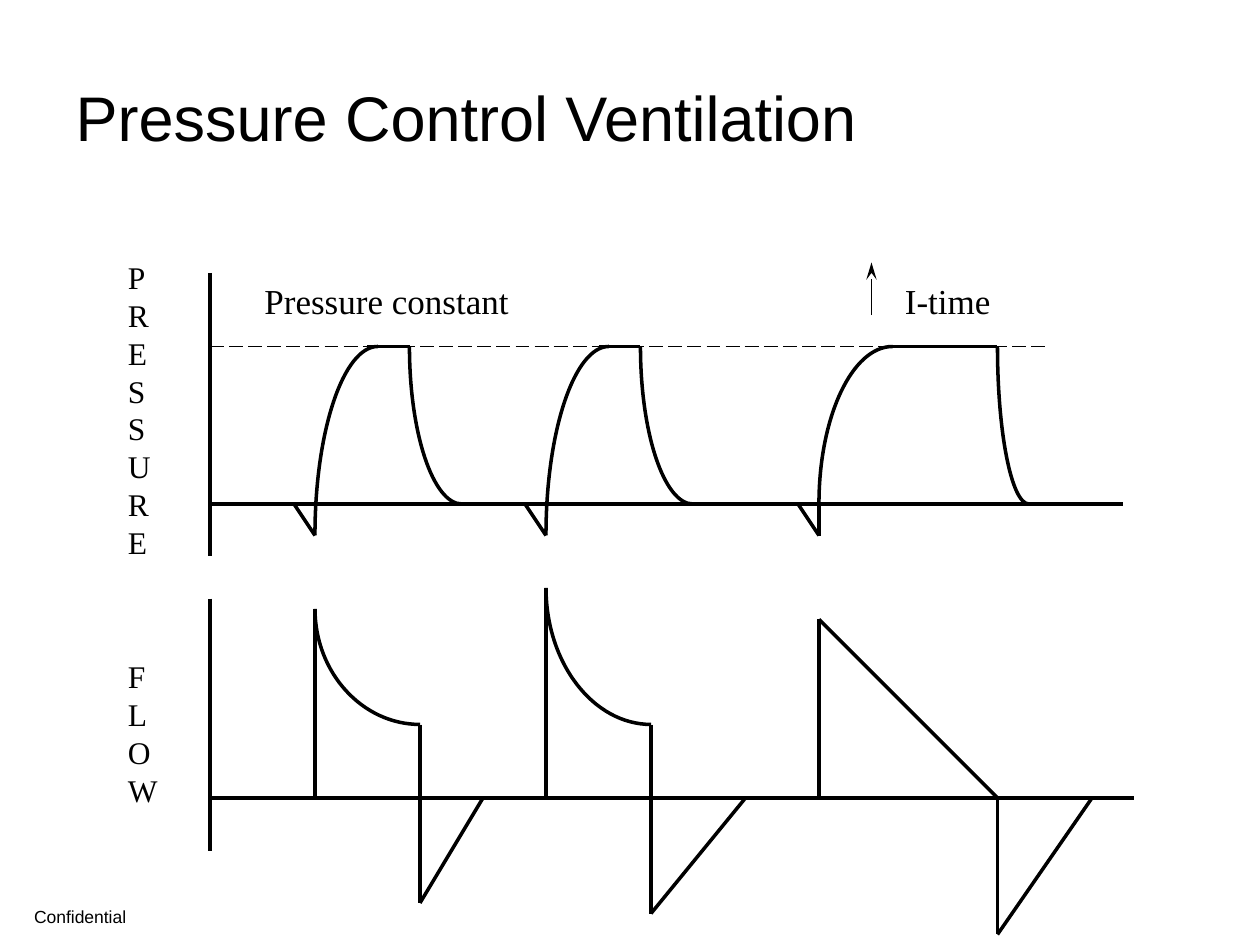
from dataclasses import dataclass

from lxml.etree import SubElement
from pptx import Presentation
from pptx.dml.color import RGBColor
from pptx.enum.dml import MSO_LINE as Dash
from pptx.enum.shapes import MSO_CONNECTOR as Connector
from pptx.enum.text import MSO_ANCHOR as Anchor, MSO_AUTO_SIZE as AutoSize, PP_ALIGN as Align
from pptx.oxml.ns import qn
from pptx.util import Pt


@dataclass(frozen=True)
class Theme:
    ink: RGBColor = RGBColor(0, 0, 0)
    paper: RGBColor = RGBColor(255, 255, 255)
    sans: str = "Arial"
    serif: str = "Times New Roman"
    title: int = 36
    label: int = 20
    axis: int = 18
    footer: int = 10
    trace: int = 2
    thin: int = 1


theme = Theme()


def write(frame, text, size, font=theme.sans, anchor=Anchor.TOP, inset=(7.2, 3.6),
          fit=AutoSize.SHAPE_TO_FIT_TEXT, leading=None):
    frame.word_wrap = True
    frame.auto_size = fit
    frame.vertical_anchor = anchor
    frame.margin_left = frame.margin_right = Pt(inset[0])
    frame.margin_top = frame.margin_bottom = Pt(inset[1])
    paragraph = frame.paragraphs[0]
    paragraph.alignment = Align.LEFT
    if leading:
        paragraph.line_spacing = Pt(size * leading)
    run = paragraph.add_run()
    run.text = text
    run.font.name = font
    run.font.size = Pt(size)
    run.font.color.rgb = theme.ink


def draw_line(x1, y1, x2, y2, weight=theme.trace, dash=None, arrow=None):
    segment = slide.shapes.add_connector(Connector.STRAIGHT, Pt(x1), Pt(y1), Pt(x2), Pt(y2))
    segment.line.color.rgb = theme.ink
    segment.line.width = Pt(weight)
    if dash:
        segment.line.dash_style = dash
    properties = segment._element.spPr
    if arrow:
        SubElement(properties.find(qn("a:ln")), qn("a:tailEnd"), type=arrow, w="med", len="lg")
    SubElement(properties, qn("a:effectLst"))


deck = Presentation()
deck.slide_width, deck.slide_height = Pt(720), Pt(540)
slide = deck.slides.add_slide(deck.slide_layouts[5])
slide.background.fill.solid()
slide.background.fill.fore_color.rgb = theme.paper

title = slide.shapes.title
title.left, title.top, title.width, title.height = Pt(36), Pt(21.6), Pt(648), Pt(90)
write(title.text_frame, "Pressure Control Ventilation", theme.title,
      anchor=Anchor.MIDDLE, fit=AutoSize.NONE)

footer = slide.shapes.add_textbox(Pt(19.5), Pt(517.5), Pt(144.5), Pt(12))
write(footer.text_frame, "Confidential", theme.footer, anchor=Anchor.BOTTOM, inset=(0, 0))

for text, size, left, top, width, height in [
    ("PRESSURE", theme.axis, 66, 144, 18, 180),
    ("FLOW", theme.axis, 66, 372, 18, 93.6),
    ("Pressure constant", theme.label, 144, 156, 270, 31.2),
    ("I-time", theme.label, 510, 156, 174, 31.2),
]:
    label = slide.shapes.add_textbox(Pt(left), Pt(top), Pt(width), Pt(height))
    write(label.text_frame, text, size, font=theme.serif, leading=1.2)

axis_x, pressure_limit, pressure_zero, trigger_dip = 120, 198, 288, 306
flow_zero, flow_end = 456, 414

draw_line(axis_x, 156, axis_x, 318)
draw_line(axis_x, pressure_zero, 642, pressure_zero)
draw_line(axis_x, 342, axis_x, 486)
draw_line(axis_x, flow_zero, 648, flow_zero)
draw_line(axis_x, pressure_limit, 600, pressure_limit, weight=theme.thin, dash=Dash.LONG_DASH)
draw_line(498, 180, 498, 150, weight=theme.thin, arrow="stealth")

curves = []
for start, rise_end, hold, release, fall_end, peak, expire, trough, recover, long_breath in [
    (180, 216, 210, 234, 264, 348, 240, 516, 276, False),
    (312, 348, 342, 366, 396, 336, 372, 522, 426, False),
    (468, 510, 510, 570, 588, 354, 570, 534, 624, True),
]:
    draw_line(start, trigger_dip, start - 12, pressure_zero)
    draw_line(hold, pressure_limit, release, pressure_limit)
    draw_line(start, flow_zero, start, peak)
    draw_line(expire, flow_zero if long_breath else flow_end, expire, trough)
    draw_line(expire, trough, recover, flow_zero)
    if long_breath:
        draw_line(start, pressure_zero, start, trigger_dip)
        draw_line(start, peak, expire, flow_zero)
    else:
        curves.append((start, peak, expire, flow_end))
    rise_start = pressure_zero if long_breath else trigger_dip
    curves.append((start, rise_start, rise_end, pressure_limit))
    curves.append((release, pressure_limit, fall_end, pressure_zero))

bow = 0.55
for x1, y1, x2, y2 in curves:
    outline = slide.shapes.build_freeform(Pt(x1), Pt(y1))
    outline.add_line_segments(
        [(Pt(x1), Pt(y1 + bow * (y2 - y1))), (Pt(x2 - bow * (x2 - x1)), Pt(y2)), (Pt(x2), Pt(y2))],
        close=False)
    curve = outline.convert_to_shape()
    curve.shadow.inherit = False
    curve.fill.background()
    curve.line.color.rgb = theme.ink
    curve.line.width = Pt(theme.trace)
    track = curve._element.spPr.find(".//" + qn("a:path"))
    bezier = SubElement(track, qn("a:cubicBezTo"))
    for straight in track.findall(qn("a:lnTo")):
        bezier.append(straight[0])
        track.remove(straight)

deck.save("out.pptx")
